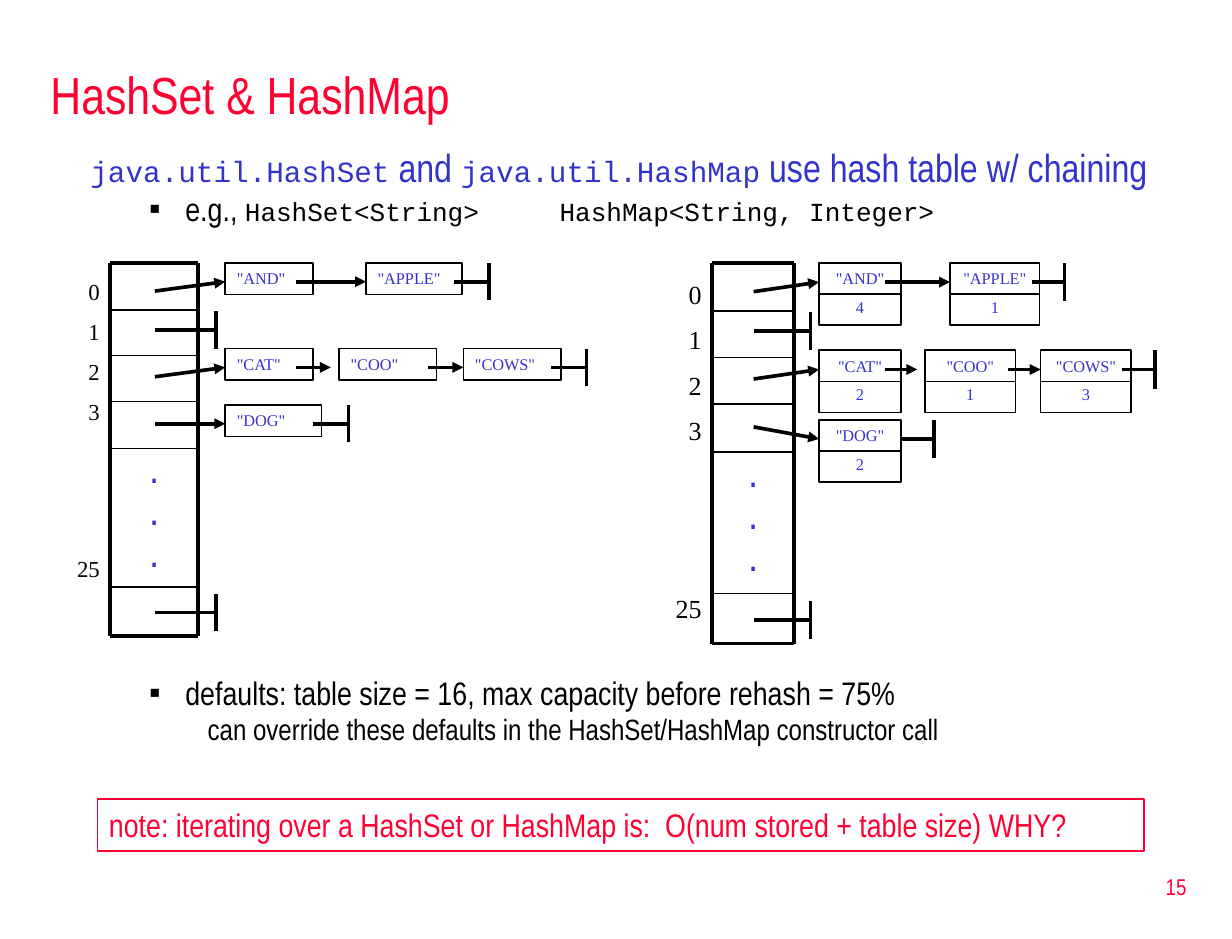
"""Build a slide that draws a HashSet and a HashMap as chained hash tables."""
from lxml.etree import SubElement
from pptx import Presentation
from pptx.dml.color import RGBColor
from pptx.enum.shapes import MSO_CONNECTOR, MSO_SHAPE
from pptx.enum.text import MSO_ANCHOR, MSO_AUTO_SIZE, PP_ALIGN
from pptx.oxml.ns import qn
from pptx.util import Inches, Pt

RED, BLUE, BLACK = "FF0033", "3333CC", "000000"
SANS, MONO, SERIF = "Arial Narrow", "Courier New", "Times New Roman"


def style(run, size, face, hue, bold=False):
    """Set the font of one run."""
    run.font.size = Pt(size)
    run.font.name = face
    run.font.bold = bold
    run.font.color.rgb = RGBColor.from_string(hue)


def line(place, start, end, width=2.25, arrow=False):
    """Draw a line between two points given in table units."""
    left, top, wide, high = place
    ends = [Inches(value) for x, y in (start, end)
            for value in (left + x * wide, top + y * high)]
    link = slide.shapes.add_connector(MSO_CONNECTOR.STRAIGHT, *ends)
    link.line.width = Pt(width)
    link.line.color.rgb = RGBColor.from_string(BLACK)
    if arrow:
        SubElement(link.line._get_or_add_ln(), qn("a:tailEnd"), type="triangle")
    SubElement(link._element.spPr, qn("a:effectLst"))


deck = Presentation()
deck.slide_width, deck.slide_height = Inches(10.5), Inches(8)
slide = deck.slides.add_slide(deck.slide_layouts[3])
title, intro, notes = slide.placeholders

areas = [(title, 0.33, 0.42, 9.92, 0.75), (intro, 0.67, 1.17, 9.52, 0.92),
         (notes, 0.67, 5.75, 9.52, 1)]
for holder, *area in areas:
    holder.left, holder.top, holder.width, holder.height = map(Inches, area)
    holder.text_frame.auto_size = MSO_AUTO_SIZE.NONE
    holder.text_frame.word_wrap = True

title.text_frame.text = "HashSet & HashMap"
title.text_frame.vertical_anchor = MSO_ANCHOR.MIDDLE
title.text_frame.paragraphs[0].alignment = PP_ALIGN.LEFT
style(title.text_frame.paragraphs[0].runs[0], 32, SANS, RED)

lists = [
    (intro, [
        (0, BLUE, [("java.util.HashSet", 18, MONO), (" and ", 24, SANS),
                   ("java.util.HashMap", 18, MONO),
                   (" use hash table w/ chaining", 24, SANS)]),
        (1, BLACK, [("e.g., ", 20, SANS),
                    ("HashSet<String>\t\tHashMap<String, Integer>", 16, MONO)])]),
    (notes, [
        (1, BLACK, [("defaults: table size = 16, max capacity before rehash = 75%",
                     20, SANS)]),
        (2, BLACK, [("can override these defaults in the HashSet/HashMap "
                     "constructor call", 18, SANS)])]),
]
indents = [(0.38, -0.38), (0.81, -0.31), (1.25, -0.25)]
for holder, items in lists:
    frame = holder.text_frame
    for count, (level, hue, parts) in enumerate(items):
        para = frame.add_paragraph() if count else frame.paragraphs[0]
        para.level = level
        para.alignment = PP_ALIGN.LEFT
        para.line_spacing = 0.8 if level else 1.0
        para.space_before = Pt(parts[0][1] * 0.2)
        props = para._p.get_or_add_pPr()
        margin, indent = indents[level]
        props.set("marL", str(Inches(margin)))
        props.set("indent", str(Inches(indent)))
        if level == 1:
            SubElement(props, qn("a:buChar"), char="▪")
        else:
            SubElement(props, qn("a:buNone"))
        for text, size, face in parts:
            run = para.add_run()
            run.text = text
            style(run, size, face, hue)

tables = [((0.94, 2.24, 1, 1), 14, 79.5, False),
          ((6.07, 2.24, 0.93, 1.02), 16, 90, True)]
rows = [0, 0.4, 0.79, 1.18, 1.58, 2.76, 3.18]
chains = [
    (0, 0.24, [("AND", 4, 0.98, 0.75, 0.6, 0.6), ("APPLE", 1, 2.18, 0.82, 0.75, 0.3)]),
    (0.73, 0.97, [("CAT", 2, 0.98, 0.75, 0.6, 0.3), ("COO", 1, 1.95, 0.83, 0.76, 0.3),
                  ("COWS", 3, 3.01, 0.83, 0.75, 0.3)]),
    (1.21, 1.37, [("DOG", 2, 0.98, 0.82, 0.75, 0.3)]),
]
for place, size, gap, mapped in tables:
    left, top, wide, high = place
    texts = [
        (0, 1.58, 0.75, 1.18, "...", PP_ALIGN.CENTER, (18, SANS, BLUE, True), [0, 4.3, 4.3]),
        (-0.52, 0.08, 0.53, 2.83, ["0", "1", "2", "3", "25"], PP_ALIGN.RIGHT,
         (size, SERIF, BLACK), [0] + [size * 0.54] * 3 + [gap])]
    for x, y, width, height, words, align, font, gaps in texts:
        box = slide.shapes.add_textbox(Inches(left + x * wide), Inches(top + y * high),
                                       Inches(width * wide), Inches(height * high))
        box.text_frame.word_wrap = True
        box.text_frame.text = "\n".join(words)
        for para, space in zip(box.text_frame.paragraphs, gaps):
            para.alignment = align
            para.space_before = Pt(space)
            style(para.runs[0], *font)

    for y in rows:
        line(place, (0, y), (0.75, y), 2.25 if y in (rows[0], rows[-1]) else 1)
    for x in (0, 0.75):
        line(place, (x, 0), (x, rows[-1]))
    for y in (0.57, 2.98):
        line(place, (0.38, y), (0.9, y))
        line(place, (0.9, y - 0.16), (0.9, y + 0.16))

    for y, slot, nodes in chains:
        if mapped and len(nodes) == 1:
            y += 0.1
        mid = y + 0.16
        line(place, (0.38, slot), (0.98, mid), arrow=True)
        for word, value, x, width, start, reach in nodes:
            if mapped and len(nodes) == 1:
                width = 0.75
            node = slide.shapes.add_shape(
                MSO_SHAPE.RECTANGLE, Inches(left + x * wide), Inches(top + y * high),
                Inches(width * wide), Inches(0.53 if mapped else 0.27))
            node.shadow.inherit = False
            node.fill.background()
            node.line.width = Pt(1)
            node.line.color.rgb = RGBColor.from_string(BLACK)
            frame = node.text_frame
            frame.word_wrap = True
            frame.vertical_anchor = MSO_ANCHOR.TOP
            frame.text = f'"{word}"\n{value}' if mapped else f'"{word}"'
            for count, para in enumerate(frame.paragraphs):
                para.alignment = PP_ALIGN.CENTER if mapped else PP_ALIGN.LEFT
                para.space_before = Pt(5.5 * count)
                style(para.runs[0], 10, SERIF, BLUE)
            if mapped:
                line(place, (x, y + 0.26), (x + width, y + 0.26), 1)
            last = word == nodes[-1][0]
            end = x + start + reach
            line(place, (x + start, mid), (end, mid), arrow=not last)
            if last:
                line(place, (end, mid - 0.16), (end, mid + 0.16))

note = slide.shapes.add_shape(MSO_SHAPE.RECTANGLE, Inches(0.83), Inches(6.81),
                              Inches(8.92), Inches(0.44))
note.shadow.inherit = False
note.fill.background()
note.line.width = Pt(1)
note.line.color.rgb = RGBColor.from_string(RED)
note.text_frame.word_wrap = True
note.text_frame.vertical_anchor = MSO_ANCHOR.TOP
note.text_frame.text = ("note: iterating over a HashSet or HashMap is:  "
                        "O(num stored + table size)\tWHY?")
note.text_frame.paragraphs[0].alignment = PP_ALIGN.LEFT
style(note.text_frame.paragraphs[0].runs[0], 20, SANS, RED)

page = slide.shapes.add_textbox(Inches(8.02), Inches(7.29), Inches(2.19), Inches(0.53))
page.text_frame.word_wrap = True
page.text_frame.vertical_anchor = MSO_ANCHOR.MIDDLE
page.text_frame.text = "15"
page.text_frame.paragraphs[0].alignment = PP_ALIGN.RIGHT
style(page.text_frame.paragraphs[0].runs[0], 14, SANS, RED)

deck.save("out.pptx")
